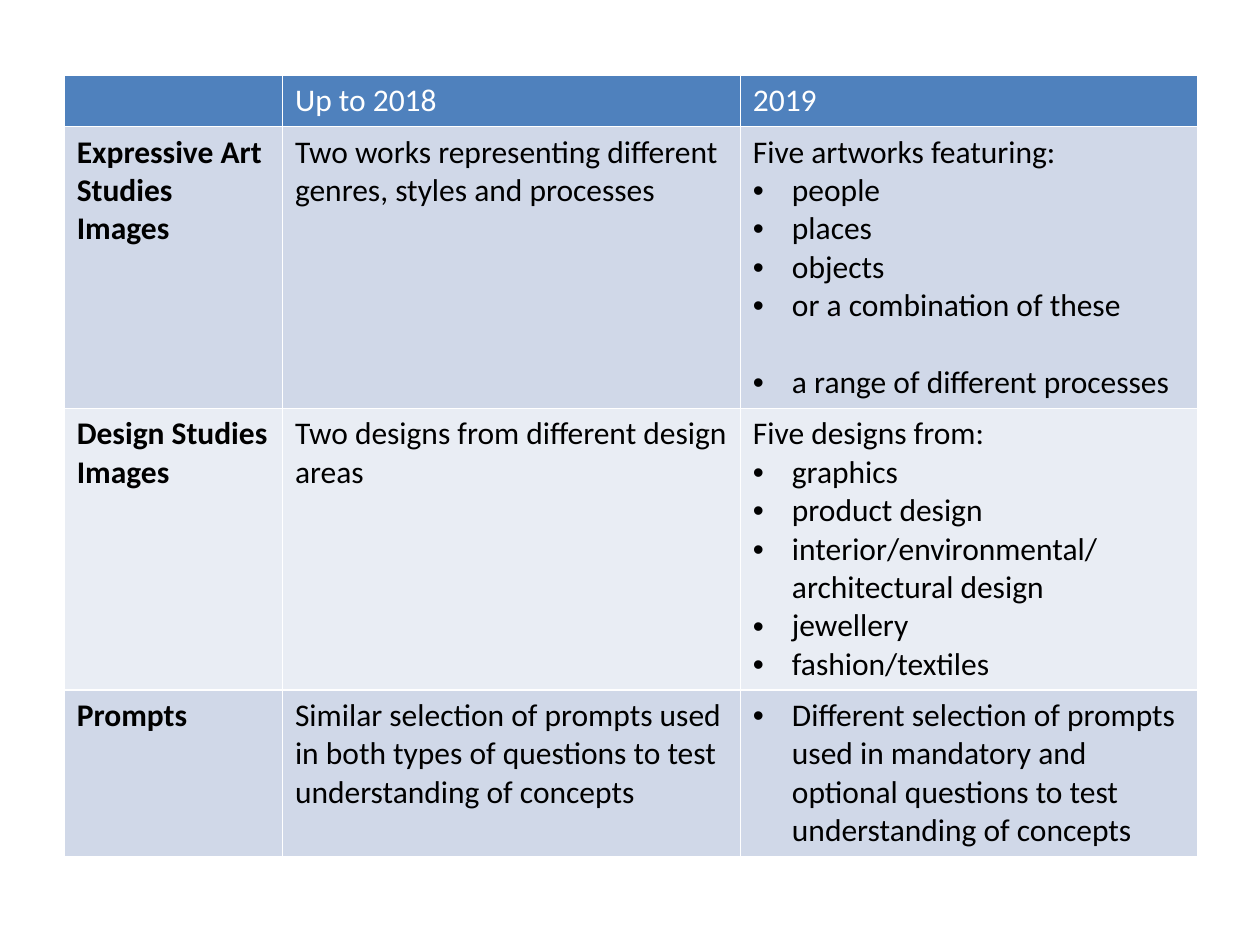
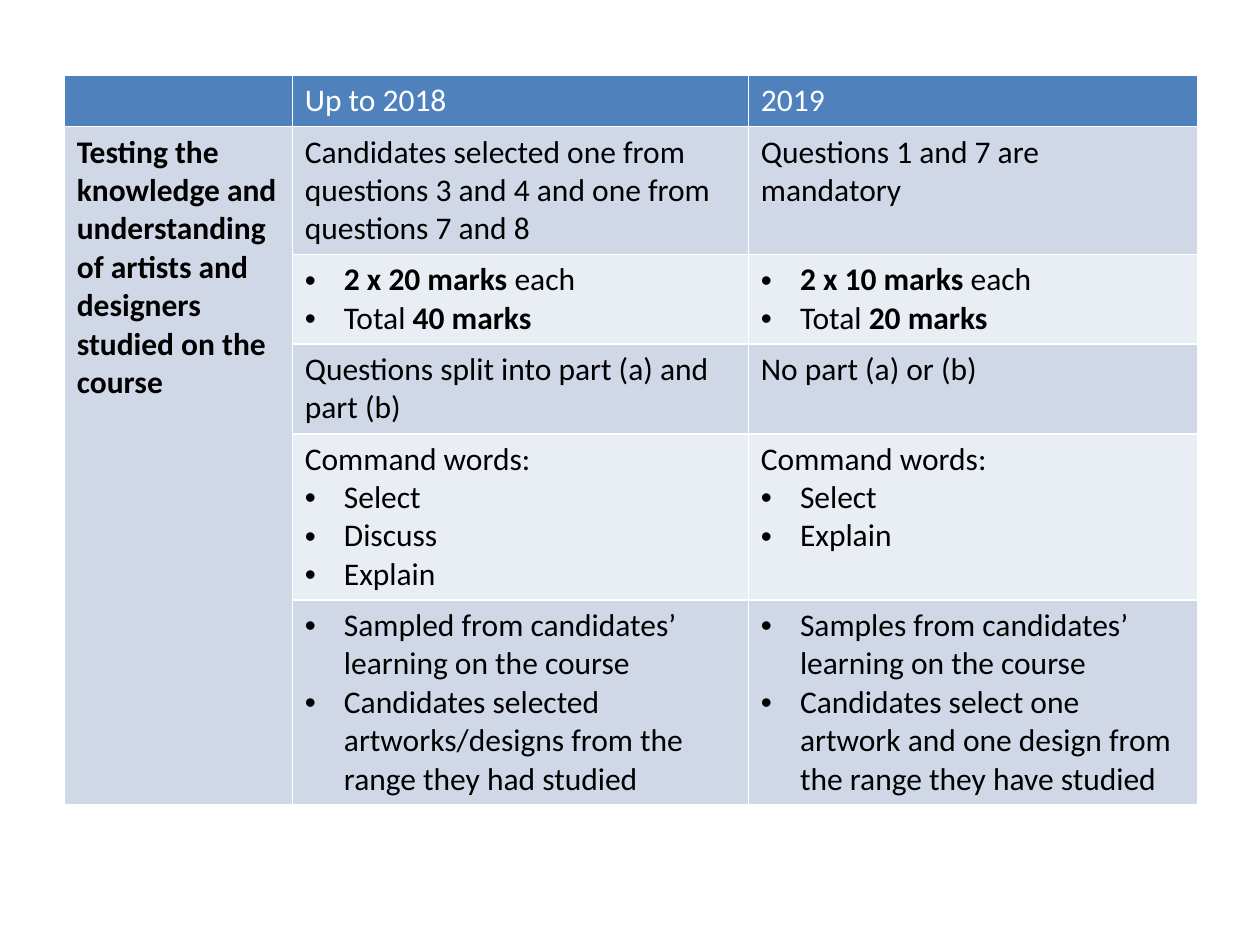
from dataclasses import dataclass

from lxml.etree import SubElement
from pptx import Presentation
from pptx.dml.color import RGBColor
from pptx.oxml.ns import qn
from pptx.util import Inches, Pt

WIDE, HIGH = Inches(10), Inches(7.5)
BLANK = 6


@dataclass(frozen=True)
class Theme:
    font: str = "Calibri"
    size: float = 18
    head: str = "4F81BD"
    bands: tuple = ("D0D8E8", "E9EDF4")
    light: str = "FFFFFF"
    dark: str = "000000"
    line: float = 0.305   # height of one text line, in inches
    pad: float = 0.1      # top and bottom cell margins together
    hang: float = 0.31    # bullet indent


THEME = Theme()
# Left, top and width as shares of the slide
BOX = (0.051, 0.08, 0.9)


@dataclass(frozen=True)
class Para:
    runs: tuple          # pairs of text and bold
    dot: bool = False
    gap: float = 0       # lines of space before


def plain(text):
    return [Para(((text, False),))]


def label(text):
    return [Para(((text, True),))]


def dots(*items):
    return [Para(((text, False),), True) for text in items]


def marks(each, total):
    return [Para(((f"2 x {each} marks", True), (" each", False)), True),
            Para((("Total ", False), (f"{total} marks", True)), True)]


HEAD = [[], plain("Up to 2018"), plain("2019")]


def bullet(par):
    props = par._p.get_or_add_pPr()
    props.set("marL", str(Inches(THEME.hang)))
    props.set("indent", str(-Inches(THEME.hang)))
    SubElement(props, qn("a:buFont"), typeface="Arial")
    SubElement(props, qn("a:buChar"), char="•")


def fill_cell(cell, paras, back, ink):
    cell.fill.solid()
    cell.fill.fore_color.rgb = RGBColor.from_string(back)
    frame = cell.text_frame
    for i, para in enumerate(paras):
        par = frame.add_paragraph() if i else frame.paragraphs[0]
        if para.dot:
            bullet(par)
        if para.gap:
            par.space_before = Inches(para.gap * THEME.line)
        for text, bold in para.runs:
            run = par.add_run()
            run.text = text
            font = run.font
            font.name, font.size, font.bold = THEME.font, Pt(THEME.size), bold
            font.color.rgb = RGBColor.from_string(ink)
    if not paras:
        frame.paragraphs[0].font.size = Pt(THEME.size)


def table_slide(deck, box, cols, body, lines, merge=False):
    """Place a banded table; cols are weights, lines are text lines per row."""
    slide = deck.slides.add_slide(deck.slide_layouts[BLANK])
    left, top, width = int(box[0] * WIDE), int(box[1] * HIGH), int(box[2] * WIDE)
    rows = [HEAD] + body
    highs = [Inches(n * THEME.line + THEME.pad) for n in [1] + lines]
    table = slide.shapes.add_table(len(rows), len(cols), left, top,
                                   width, sum(highs)).table
    # Grid
    for col, part in zip(table.columns, cols):
        col.width = int(width * part / sum(cols))
    for row, high in zip(table.rows, highs):
        row.height = high
    # Cells
    for r, row in enumerate(rows):
        back = THEME.bands[(r - 1) % 2] if r else THEME.head
        ink = THEME.dark if r else THEME.light
        for c, paras in enumerate(row):
            fill_cell(table.cell(r, c), paras, back, ink)
    if merge:
        table.cell(1, 0).merge(table.cell(len(body), 0))


# Images and prompts
IMAGES = [
    [label("Expressive Art Studies Images"),
     plain("Two works representing different genres, styles and processes"),
     plain("Five artworks featuring:")
     + dots("people", "places", "objects", "or a combination of these")
     + [Para((("a range of different processes", False),), True, 1)]],
    [label("Design Studies Images"),
     plain("Two designs from different design areas"),
     plain("Five designs from:")
     + dots("graphics", "product design",
            "interior/environmental/ architectural design",
            "jewellery", "fashion/textiles")],
    [label("Prompts"),
     plain("Similar selection of prompts used in both types of questions "
           "to test understanding of concepts"),
     dots("Different selection of prompts used in mandatory and optional "
          "questions to test understanding of concepts")],
]

# Questions on artists and designers
TESTS = [
    [label("Testing the knowledge and understanding of artists and designers "
           "studied on the course"),
     plain("Candidates selected one from questions 3 and 4 and one from "
           "questions 7 and 8"),
     plain("Questions 1 and 7 are mandatory")],
    [[], marks(20, 40), marks(10, 20)],
    [[], plain("Questions split into part (a) and part (b)"),
     plain("No part (a) or (b)")],
    [[], plain("Command words:") + dots("Select", "Discuss", "Explain"),
     plain("Command words:") + dots("Select", "Explain")],
    [[], dots("Sampled from candidates’ learning on the course",
              "Candidates selected artworks/designs from the range they "
              "had studied"),
     dots("Samples from candidates’ learning on the course",
          "Candidates select one artwork and one design from the range "
          "they have studied")],
]


def main():
    deck = Presentation()
    deck.slide_width, deck.slide_height = WIDE, HIGH
    table_slide(deck, BOX, (1.73, 3.63, 3.63), IMAGES, [7, 7, 4])
    table_slide(deck, BOX, (1.81, 3.62, 3.57), TESTS, [3, 2, 2, 4, 5], True)
    deck.save("out.pptx")


if __name__ == "__main__":
    main()
